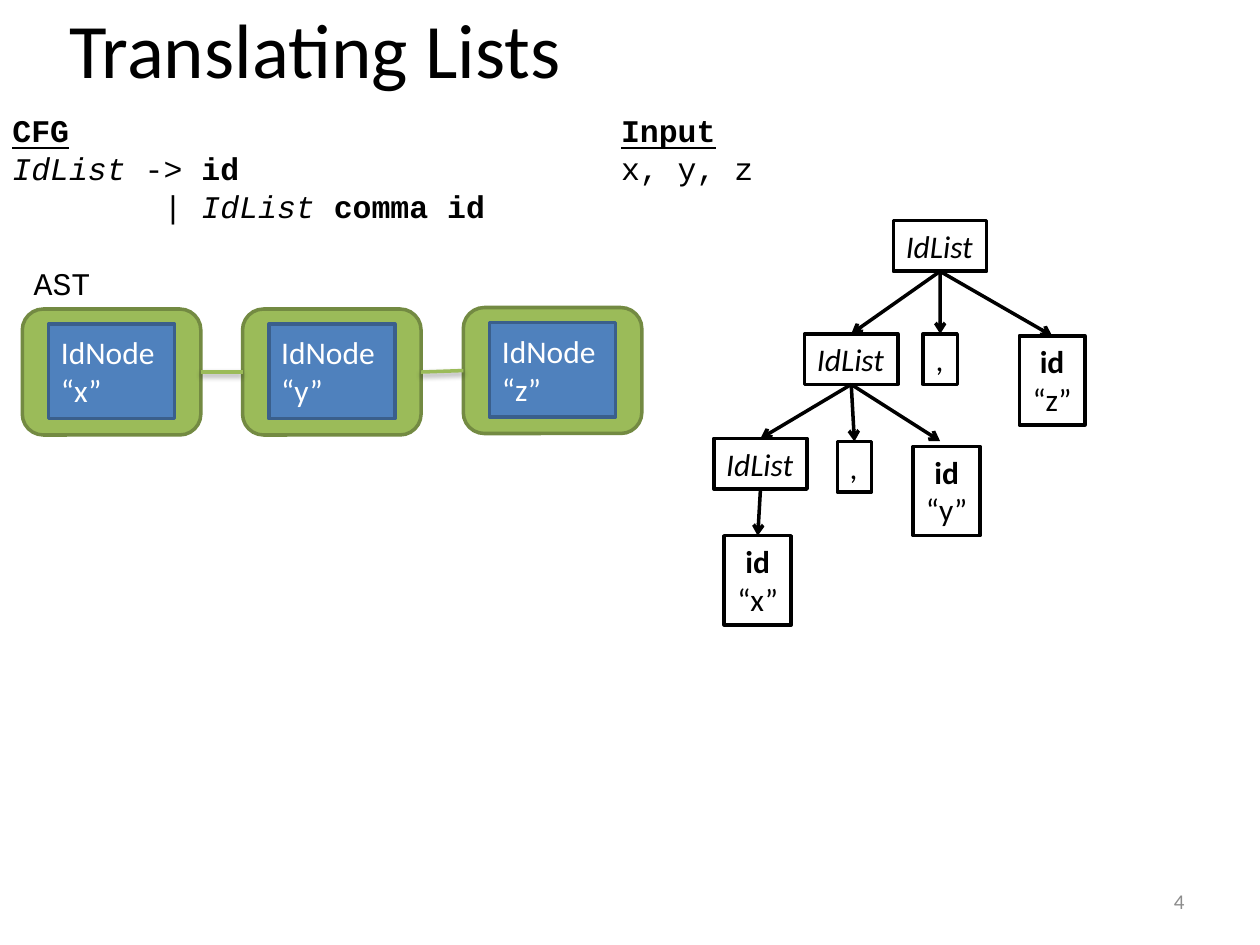
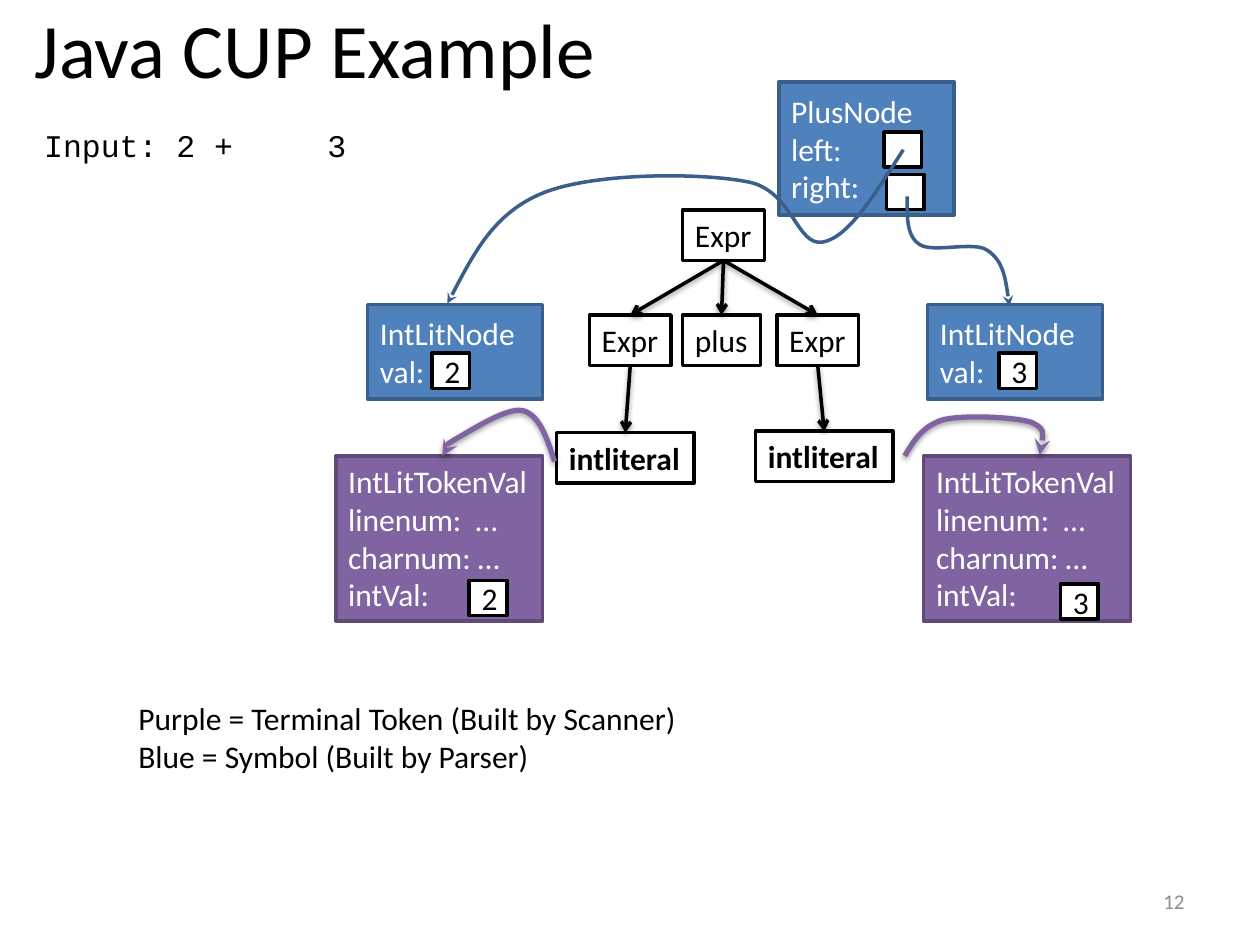
from lxml.etree import SubElement
from pptx import Presentation
from pptx.dml.color import RGBColor
from pptx.enum.shapes import MSO_CONNECTOR as Link, MSO_SHAPE as Preset
from pptx.enum.text import MSO_ANCHOR as Anchor, MSO_AUTO_SIZE as Fit, PP_ALIGN as Align
from pptx.oxml.ns import qn
from pptx.util import Cm, Pt

COLORS = {
    "black": "000000", "white": "FFFFFF", "grey": "8C8C8C",
    "green": "9BBB59", "dark green": "738A42",
    "blue": "4F81BD", "dark blue": "3A5F8C",
    "purple": "8064A2", "dark purple": "5F4A78",
}
FLAGS = {"b": "bold", "i": "italic", "u": "underline"}
TOP, LEFT, BOTTOM, RIGHT = range(4)  # connection sites of a rectangle

# Looks with "fits" shrink round unwrapped text; the others keep their size.
PLAIN = {"ink": "black", "fits": True}
LOOKS = {
    "code": {**PLAIN, "font": "Courier New"},
    "caption": PLAIN,
    "number": {"ink": "grey", "size": 12, "align": Align.RIGHT},
    "tree": {**PLAIN, "fill": "white", "line": "black"},
    "leaf": {**PLAIN, "fill": "white", "line": "black", "align": Align.CENTER},
    "frame": {"ink": "white", "fill": "green", "line": "dark green",
              "preset": Preset.ROUNDED_RECTANGLE},
    "node": {"ink": "white", "fill": "blue", "line": "dark blue"},
    "token": {"ink": "white", "fill": "purple", "line": "dark purple", "fits": True},
    "slot": {"ink": "black", "fill": "white", "line": "black", "align": Align.CENTER},
}


def add_box(page, look_name, place, lines=()):
    """Add a text box or shape; a line is a string or a list of (text, flags)."""
    look = LOOKS[look_name]
    place = [Cm(length) for length in place]
    if "fill" in look:
        box = page.shapes.add_shape(look.get("preset", Preset.RECTANGLE), *place)
        box.shadow.inherit = False
        box.fill.solid()
        box.fill.fore_color.rgb = RGBColor.from_string(COLORS[look["fill"]])
        box.line.color.rgb = RGBColor.from_string(COLORS[look["line"]])
        box.line.width = Pt(2)
    else:
        box = page.shapes.add_textbox(*place)
    frame = box.text_frame
    fits = look.get("fits", False)
    frame.word_wrap = not fits
    frame.auto_size = Fit.SHAPE_TO_FIT_TEXT if fits else Fit.NONE
    frame.vertical_anchor = Anchor.TOP if fits else Anchor.MIDDLE
    for index, line in enumerate(lines):
        para = frame.add_paragraph() if index else frame.paragraphs[0]
        para.alignment = look.get("align", Align.LEFT)
        for text, flags in [(line, "")] if isinstance(line, str) else line:
            span = para.add_run()
            span.text = text
            span.font.color.rgb = RGBColor.from_string(COLORS[look["ink"]])
            formats = {"name": look.get("font", "Calibri"), "size": Pt(look.get("size", 18))}
            formats.update({FLAGS[flag]: True for flag in flags})
            for name, value in formats.items():
                setattr(span.font, name, value)
    return box


def style_line(stroke, color, width=2, tip=None, shadow=False):
    stroke.line.color.rgb = RGBColor.from_string(COLORS[color])
    stroke.line.width = Pt(width)
    properties = stroke._element.spPr
    if tip:
        SubElement(properties.find(qn("a:ln")), qn("a:tailEnd"), type=tip)
    effects = SubElement(properties, qn("a:effectLst"))
    if shadow:
        cast = SubElement(effects, qn("a:outerShdw"), blurRad="40000", dist="20000",
                          dir="5400000", rotWithShape="0")
        shade = SubElement(cast, qn("a:srgbClr"), val=COLORS["black"])
        SubElement(shade, qn("a:alpha"), val="38000")


deck = Presentation()
deck.slide_width, deck.slide_height = Cm(25.4), Cm(19.05)

# Shared title and page number
pages = []
for heading, number in (("Translating Lists", "4"), ("Java CUP Example", "12")):
    page = deck.slides.add_slide(deck.slide_layouts[5])
    title = page.shapes.title
    place = {"left": -5.08, "top": -0.63, "width": 22.86, "height": 3.18}
    for name, value in place.items():
        setattr(title, name, Cm(value))
    title.text_frame.text = heading
    title.text_frame.vertical_anchor = Anchor.MIDDLE
    para = title.text_frame.paragraphs[0]
    para.alignment = Align.CENTER
    for name, value in {"name": "Calibri", "size": Pt(44)}.items():
        setattr(para.runs[0].font, name, value)
    para.runs[0].font.color.rgb = RGBColor.from_string(COLORS["black"])
    add_box(page, "number", (18.21, 17.65, 5.92, 1.02), [number])
    pages.append(page)
lists_page, cup_page = pages

# Translating Lists: grammar, input and list of nodes
grammar = add_box(lists_page, "code", (0, 2.12, 10.08, 2.57), [
    [("CFG", "bu")],
    [("IdList", "i"), (" -> ", ""), ("id", "b")],
    [("| ", ""), ("IdList ", "i"), ("comma id", "b")],
])
alternative = grammar.text_frame.paragraphs[2]._p.get_or_add_pPr()
alternative.set("marL", str(Cm(3.05)))
alternative.set("indent", "0")
add_box(lists_page, "code", (0.43, 5.19, 1.65, 1.02), ["AST"])
add_box(lists_page, "code", (12.27, 2.12, 3.2, 1.8), [[("Input", "bu")], "x, y, z"])

frames = []
for letter, left, top in (("x", 0.45, 6.23), ("y", 4.89, 6.23), ("z", 9.34, 6.2)):
    frames.append(add_box(lists_page, "frame", (left, top, 3.6, 2.54)))
    add_box(lists_page, "node", (left + 0.53, top + 0.3, 2.54, 1.91),
            ["IdNode", f"“{letter}”"])
for before, after in zip(frames, frames[1:]):
    link = lists_page.shapes.add_connector(Link.STRAIGHT, 0, 0, 0, 0)
    link.begin_connect(before, RIGHT)
    link.end_connect(after, LEFT)
    style_line(link, "green", shadow=True)

# Parse trees of both pages
list_tree = {}
for name, left, top in (("root", 18.01, 4.45), ("middle", 16.22, 6.73), ("last", 14.39, 8.84)):
    list_tree[name] = add_box(lists_page, "tree", (left, top, 1.88, 1.02), [[("IdList", "i")]])
for name, left, top in (("comma z", 18.61, 6.73), ("comma y", 16.88, 8.9)):
    list_tree[name] = add_box(lists_page, "tree", (left, top, 0.69, 1.02), [","])
for letter, left, top, width in (("x", 14.6, 10.8, 1.35), ("y", 18.41, 9, 1.35),
                                 ("z", 20.55, 6.77, 1.32)):
    list_tree[letter] = add_box(lists_page, "leaf", (left, top, width, 1.8),
                                [[("id", "b")], f"“{letter}”"])

sum_tree = {}
for name, text, flags, left, top, width in (
    ("root", "Expr", "", 13.76, 4.23, 1.65),
    ("left", "Expr", "", 11.88, 6.35, 1.65),
    ("right", "Expr", "", 15.66, 6.35, 1.65),
    ("plus", "plus", "", 13.76, 6.35, 1.57),
    ("two", "intliteral", "b", 11.22, 8.72, 2.77),
    ("three", "intliteral", "b", 15.23, 8.69, 2.77),
):
    sum_tree[name] = add_box(cup_page, "tree", (left, top, width, 1.02), [[(text, flags)]])

list_branches = {"root": ["middle", "comma z", "z"], "middle": ["last", "comma y", "y"],
                 "last": ["x"]}
sum_branches = {"root": ["left", "plus", "right"], "left": ["two"], "right": ["three"]}
free_ends = {"y": (18.95, 8.89)}  # this arrow stops short of its box
for page, tree, branches, shadow in (
    (lists_page, list_tree, list_branches, False),
    (cup_page, sum_tree, sum_branches, True),
):
    for parent, children in branches.items():
        for child in children:
            end = [Cm(length) for length in free_ends.get(child, (0, 0))]
            arrow = page.shapes.add_connector(Link.STRAIGHT, 0, 0, *end)
            arrow.begin_connect(tree[parent], BOTTOM)
            if child not in free_ends:
                arrow.end_connect(tree[child], TOP)
            style_line(arrow, "black", tip="arrow", shadow=shadow)

# Java CUP Example: input, tokens, nodes and their value slots
source = add_box(cup_page, "code", (0.64, 2.42, 6.63, 1.02), ["Input: 2 +\t3"])
tabs = SubElement(source.text_frame.paragraphs[0]._p.get_or_add_pPr(), qn("a:tabLst"))
SubElement(tabs, qn("a:tab"), pos=str(Cm(5.71)), algn="l")

for left in (6.77, 18.62):
    add_box(cup_page, "token", (left, 9.19, 4.17, 3.33),
            ["IntLitTokenVal", "linenum:  …", "charnum: …", "intVal:"])
for left in (7.41, 18.7):
    add_box(cup_page, "node", (left, 6.14, 3.53, 1.91), ["IntLitNode", "val:"])
add_box(cup_page, "node", (15.7, 1.65, 3.53, 2.69), ["PlusNode", "left:", "right:"])
for text, left, top in (
    ("", 17.82, 2.66), ("", 17.87, 3.52),
    ("2", 8.71, 7.12), ("3", 20.14, 7.12),
    ("2", 9.46, 11.7), ("3", 21.38, 11.77),
):
    add_box(cup_page, "slot", (left, top, 0.76, 0.71), [text] if text else [])

# Curved pointers: a start, then two control points and an end per piece
for color, width, shadow, knots in (
    ("purple", 3, True, [
        (11.18, 9.3), (11.02, 8.81), (10.87, 8.36), (10.54, 8.28), (10.21, 8.2),
        (9.45, 8.71), (9.17, 8.86), (8.92, 9.02), (8.92, 9.12), (8.92, 9.19)]),
    ("purple", 3, True, [
        (18.24, 9.19), (18.42, 8.89), (18.59, 8.59), (19.02, 8.46), (19.46, 8.36),
        (20.45, 8.41), (20.78, 8.51), (21.08, 8.64), (21.03, 8.92), (20.96, 9.17)]),
    ("dark blue", 2, False, [
        (18.21, 3.02), (17.65, 3.89), (17.12, 4.78), (16.59, 4.88), (16.05, 4.98),
        (15.98, 3.81), (15.04, 3.66), (14.1, 3.48), (11.96, 3.48), (10.95, 3.89),
        (9.96, 4.29), (9.5, 5.21), (9.02, 6.12)]),
    ("dark blue", 2, False, [
        (18.29, 3.96), (18.29, 4.34), (18.26, 4.75), (18.54, 4.93), (18.82, 5.11),
        (19.63, 4.85), (19.91, 5.05), (20.22, 5.26), (20.29, 5.72), (20.35, 6.17)]),
):
    knots = [(Cm(x), Cm(y)) for x, y in knots]
    builder = cup_page.shapes.build_freeform(*knots[0])
    builder.add_line_segments(knots[3::3], close=False)
    pointer = builder.convert_to_shape()
    outline = pointer._element.find(".//" + qn("a:path"))
    for index, straight in enumerate(outline.findall(qn("a:lnTo"))):
        outline.remove(straight)
        bend = SubElement(outline, qn("a:cubicBezTo"))
        for x, y in knots[3 * index + 1:3 * index + 4]:
            SubElement(bend, qn("a:pt"), x=str(x - pointer.left), y=str(y - pointer.top))
    pointer.fill.background()
    style_line(pointer, color, width, "stealth", shadow)

add_box(cup_page, "caption", (2.54, 13.97, 11.48, 1.8),
        ["Purple = Terminal Token (Built by Scanner)", "Blue = Symbol (Built by Parser)"])

deck.save("out.pptx")
